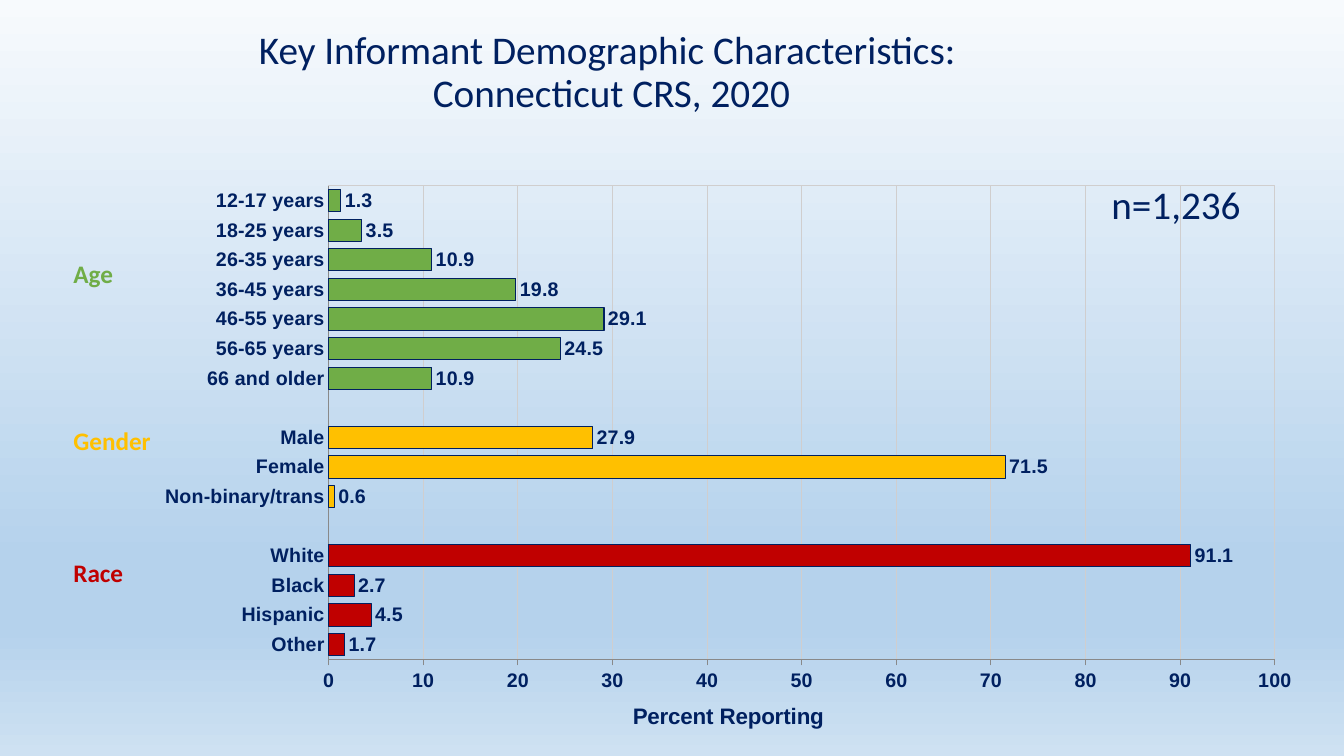
from lxml import etree
from pptx import Presentation
from pptx import util as u
from pptx.chart.data import CategoryChartData
from pptx.dml.color import RGBColor
from pptx.enum import chart as ch, text
from pptx.oxml import ns, parse_xml

NAVY = RGBColor(0x00, 0x20, 0x60)
GREEN = RGBColor(0x70, 0xAD, 0x47)
GOLD = RGBColor(0xFF, 0xC0, 0x00)
RED = RGBColor(0xC0, 0x00, 0x00)
GRID = RGBColor(0xD0, 0xCE, 0xCE)
AXIS = RGBColor(0x89, 0x89, 0x89)
SKY_TOP = RGBColor(0xF7, 0xFA, 0xFD)
SKY_DEEP = RGBColor(0xB5, 0xD2, 0xEC)
SKY_FOOT = RGBColor(0xCE, 0xE1, 0xF2)

# Content, from top to bottom
TITLE_LINES = ["Key Informant Demographic Characteristics: ", "Connecticut CRS, 2020"]
SAMPLE_SIZE = "n=1,236"
AXIS_TITLE = "Percent Reporting"
# name, colour, top and width of the label in cm, bars
GROUPS = [
    ("Age", GREEN, 6.38, 1.6, [
        ("12-17 years", 1.3), ("18-25 years", 3.5), ("26-35 years", 10.9),
        ("36-45 years", 19.8), ("46-55 years", 29.1), ("56-65 years", 24.5),
        ("66 and older", 10.9)]),
    ("Gender", GOLD, 10.59, 2.5, [
        ("Male", 27.9), ("Female", 71.5), ("Non-binary/trans", 0.6)]),
    ("Race", RED, 13.92, 1.8, [
        ("White", 91.1), ("Black", 2.7), ("Hispanic", 4.5), ("Other", 1.7)]),
]
SKY_STOPS = [(0, SKY_TOP), (74, SKY_DEEP), (83, SKY_DEEP), (100, SKY_FOOT)]
PLOT_AREA = {"x": 0.211, "y": 0.083, "w": 0.753, "h": 0.79}


def style_font(font, size, colour, name, bold=False):
    font.size = u.Pt(size)
    font.color.rgb = colour
    font.name = name
    font.bold = bold


def add_label(slide, wording, left, top, width, height, size, colour, bold):
    box = slide.shapes.add_textbox(u.Cm(left), u.Cm(top), u.Cm(width), u.Cm(height))
    box.text_frame.word_wrap = False
    box.text_frame.auto_size = text.MSO_AUTO_SIZE.SHAPE_TO_FIT_TEXT
    run = box.text_frame.paragraphs[0].add_run()
    run.text = wording
    style_font(run.font, size, colour, "Calibri", bold)


def set_background(slide):
    fill = slide.background.fill
    fill.gradient()
    fill.gradient_angle = 270
    stop_list = slide.background._cSld.find(".//" + ns.qn("a:gsLst"))
    for stop in list(stop_list):
        stop_list.remove(stop)
    for position, colour in SKY_STOPS:
        stop = etree.SubElement(stop_list, ns.qn("a:gs"), pos=str(position * 1000))
        etree.SubElement(stop, ns.qn("a:srgbClr"), val=str(colour))


def set_title(slide):
    title = slide.shapes.title
    title.left, title.top = u.Cm(2.33), u.Cm(0.5)
    title.width, title.height = u.Cm(26.16), u.Cm(2.7)
    title.text_frame.auto_size = text.MSO_AUTO_SIZE.NONE
    title.text_frame.vertical_anchor = text.MSO_ANCHOR.MIDDLE
    paragraph = title.text_frame.paragraphs[0]
    paragraph.alignment = text.PP_ALIGN.CENTER
    paragraph.line_spacing = 0.9
    for index, line in enumerate(TITLE_LINES):
        if index:
            paragraph.add_line_break()
        run = paragraph.add_run()
        run.text = line
        style_font(run.font, 28, NAVY, "Calibri")


def add_bars(slide):
    # Bars run bottom to top, with an empty row between groups
    rows = []
    for name, colour, top, width, bars in reversed(GROUPS):
        if rows:
            rows.append(("", None, None))
        rows += [(label, value, colour) for label, value in reversed(bars)]

    data = CategoryChartData()
    data.categories = [label for label, value, colour in rows]
    data.add_series("Series 1", [value for label, value, colour in rows])
    chart = slide.shapes.add_chart(
        ch.XL_CHART_TYPE.BAR_CLUSTERED, u.Cm(1.6), u.Cm(3.43),
        u.Cm(31.67), u.Cm(15.11), data).chart
    chart.has_legend = False
    chart.has_title = False
    chart.font.size = u.Pt(18)
    chart.font.name = "Calibri"

    plot = chart.plots[0]
    plot.gap_width = 33
    plot.overlap = 1
    plot.vary_by_categories = False
    series = plot.series[0]
    series.format.fill.solid()
    series.format.fill.fore_color.rgb = GREEN
    series.format.line.color.rgb = NAVY
    series.format.line.width = u.Pt(0.75)
    for index, (label, value, colour) in enumerate(rows):
        if colour in (GOLD, RED):
            point = series.points[index].format
            point.fill.solid()
            point.fill.fore_color.rgb = colour
            point.line.color.rgb = NAVY
            point.line.width = u.Pt(0.75)

    labels = series.data_labels
    labels.show_value = True
    labels.position = ch.XL_LABEL_POSITION.OUTSIDE_END
    style_font(labels.font, 14, NAVY, "Arial", True)

    # Axes
    for axis in (chart.category_axis, chart.value_axis):
        style_font(axis.tick_labels.font, 14, NAVY, "Arial", True)
        axis.format.line.color.rgb = AXIS
        axis.format.line.width = u.Pt(0.75)
        axis.minor_tick_mark = ch.XL_TICK_MARK.NONE
    chart.category_axis.major_tick_mark = ch.XL_TICK_MARK.NONE
    percent = chart.value_axis
    percent.major_tick_mark = ch.XL_TICK_MARK.OUTSIDE
    percent.minimum_scale, percent.maximum_scale, percent.major_unit = 0, 100, 10
    percent.tick_labels.number_format = "0"
    percent.tick_labels.number_format_is_linked = False
    percent.has_major_gridlines = True
    percent.major_gridlines.format.line.color.rgb = GRID
    percent.major_gridlines.format.line.width = u.Pt(0.75)
    run = percent.axis_title.text_frame.paragraphs[0].add_run()
    run.text = AXIS_TITLE
    style_font(run.font, 16, NAVY, "Arial", True)

    # Fixed plot area with a thin frame
    modes = '<c:layoutTarget val="inner"/><c:xMode val="edge"/><c:yMode val="edge"/>'
    sizes = "".join(f'<c:{key} val="{share}"/>' for key, share in PLOT_AREA.items())
    plot_area = chart._chartSpace.chart.plotArea
    for layout in plot_area.findall(ns.qn("c:layout")):
        plot_area.remove(layout)
    plot_area.insert(0, parse_xml(
        f'<c:layout {ns.nsdecls("c")}><c:manualLayout>{modes}{sizes}'
        "</c:manualLayout></c:layout>"))
    plot_area.append(parse_xml(
        f'<c:spPr {ns.nsdecls("c", "a")}><a:noFill/><a:ln w="{u.Pt(0.75)}"><a:solidFill>'
        f'<a:srgbClr val="{GRID}"/></a:solidFill></a:ln></c:spPr>'))


def main():
    presentation = Presentation()
    presentation.slide_width, presentation.slide_height = u.Cm(33.87), u.Cm(19.05)
    slide = presentation.slides.add_slide(presentation.slide_layouts[5])
    set_background(slide)
    set_title(slide)
    add_bars(slide)
    for name, colour, top, width, bars in GROUPS:
        add_label(slide, name, 1.6, top, width, 1.02, 18, colour, True)
    add_label(slide, SAMPLE_SIZE, 27.76, 4.42, 3.81, 1.45, 28, NAVY, False)
    presentation.save("out.pptx")


if __name__ == "__main__":
    main()
